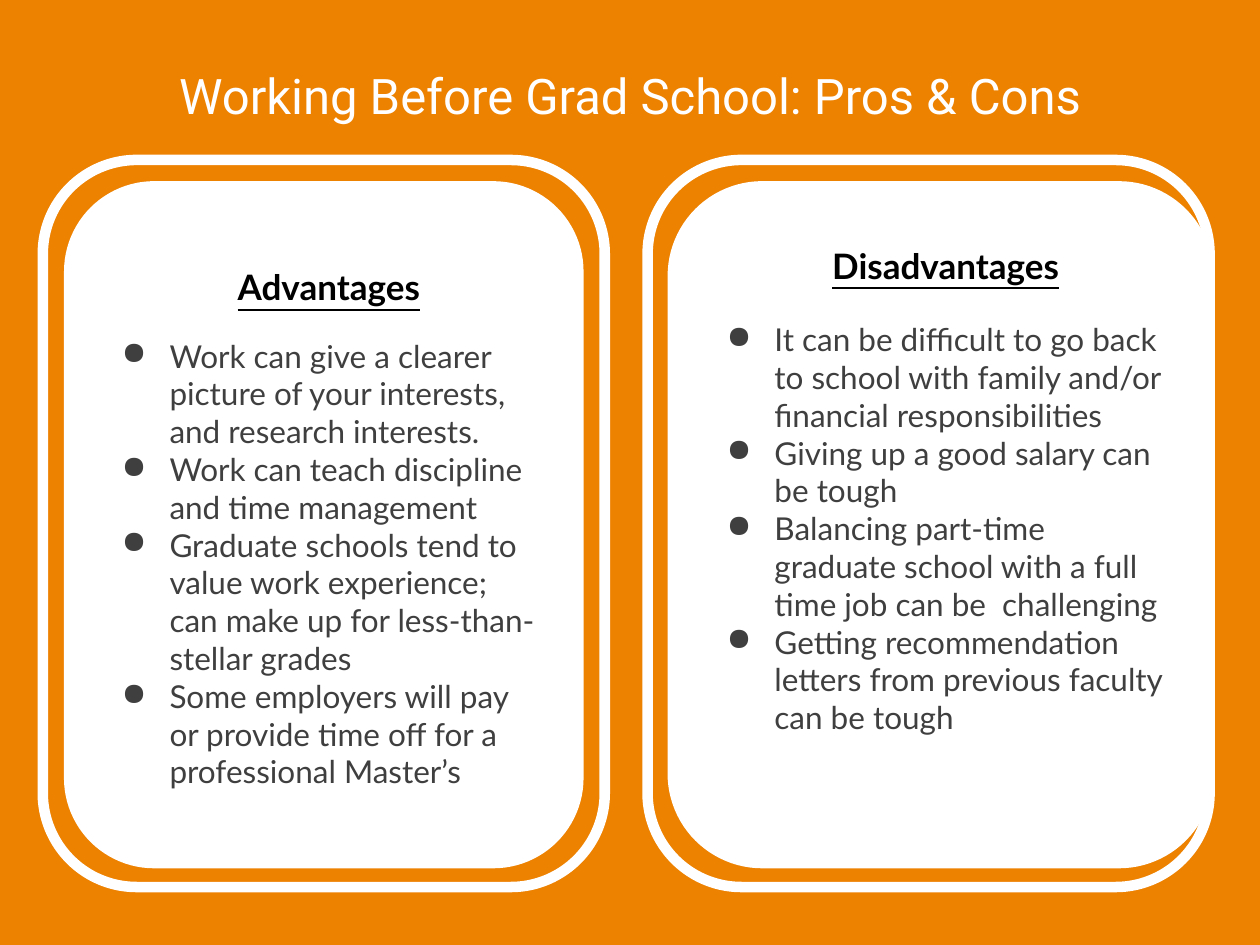
from lxml import etree
from pptx import Presentation
from pptx.dml.color import RGBColor
from pptx.enum.shapes import MSO_SHAPE
from pptx.enum.text import MSO_ANCHOR, MSO_AUTO_SIZE, PP_ALIGN
from pptx.oxml.ns import qn
from pptx.util import Inches, Pt

COLORS = {"orange": "ED8100", "white": "FFFFFF", "heading": "000000", "body": "3F3F3F"}
CARD_TOP, CARD_HEIGHT = 1.48, 5.37
FRAME_TOP, FRAME_WIDTH, FRAME_HEIGHT = 1.27, 4.46, 5.77

columns = [
    {
        "heading": "Advantages",
        "frame_left": 0.34, "card_left": 0.55, "card_width": 4.04,
        "heading_gap": 16.5, "bottom_inset": 0.05,
        "points": [
            "Work can give a clearer picture of your interests, and research interests.",
            "Work can teach discipline and time management",
            "Graduate schools tend to value work experience; \vcan make up for less-than-stellar grades",
            "Some employers will pay or provide time off for a professional Master’s",
        ],
    },
    {
        "heading": "Disadvantages",
        "frame_left": 5.14, "card_left": 5.34, "card_width": 4.25,
        "heading_gap": 19.5, "bottom_inset": 0.65,
        "points": [
            "It can be difficult to go back to school with family and/or financial responsibilities",
            "Giving up a good salary can be tough",
            "Balancing part-time graduate school with a full time job can be  challenging",
            "Getting recommendation letters from previous faculty can be tough",
        ],
    },
]


def add_rounded(page, left, top, width, height):
    shape = page.shapes.add_shape(
        MSO_SHAPE.ROUNDED_RECTANGLE, Inches(left), Inches(top), Inches(width), Inches(height))
    shape.adjustments[0] = 0.167
    shape.shadow.inherit = False
    shape.line.color.rgb = RGBColor.from_string(COLORS["white"])
    shape.line.width = Pt(6)
    return shape


def style_text(para, font_name, size, color):
    for span in para.runs:
        span.font.name = font_name
        span.font.size = Pt(size)
        span.font.color.rgb = RGBColor.from_string(COLORS[color])


deck = Presentation()
deck.slide_width, deck.slide_height = Inches(10), Inches(7.5)
page = deck.slides.add_slide(deck.slide_layouts[5])
page.background.fill.solid()
page.background.fill.fore_color.rgb = RGBColor.from_string(COLORS["orange"])

title = page.shapes.title
title.left, title.top, title.width, title.height = Inches(0), Inches(0.24), Inches(10), Inches(1.03)
title.text_frame.text = "Working Before Grad School: Pros & Cons"
title.text_frame.auto_size = MSO_AUTO_SIZE.NONE
title.text_frame.vertical_anchor = MSO_ANCHOR.MIDDLE
title.text_frame.margin_top = title.text_frame.margin_bottom = Inches(0.1)
title.text_frame.paragraphs[0].alignment = PP_ALIGN.CENTER
style_text(title.text_frame.paragraphs[0], "Roboto", 28, "white")

for column in columns:
    frame = add_rounded(page, column["frame_left"], FRAME_TOP, FRAME_WIDTH, FRAME_HEIGHT)
    frame.fill.background()

    card = add_rounded(page, column["card_left"], CARD_TOP, column["card_width"], CARD_HEIGHT)
    card.fill.solid()
    card.fill.fore_color.rgb = RGBColor.from_string(COLORS["white"])
    text = card.text_frame
    text.word_wrap = True
    text.vertical_anchor = MSO_ANCHOR.MIDDLE
    text.margin_bottom = Inches(column["bottom_inset"])

    text.text = column["heading"]
    heading = text.paragraphs[0]
    heading.alignment = PP_ALIGN.CENTER
    heading.line_spacing = 1.15
    heading.space_after = Pt(column["heading_gap"])
    heading._p.get_or_add_pPr().set("marL", str(Inches(0.08)))
    style_text(heading, "Lato", 20, "heading")
    heading.runs[0].font.bold = True
    heading.runs[0].font.underline = True

    for point in column["points"]:
        para = text.add_paragraph()
        para.text = point
        para.alignment = PP_ALIGN.LEFT
        properties = para._p.get_or_add_pPr()
        properties.set("marL", str(Inches(0.5)))
        properties.set("indent", str(Inches(-0.38)))
        bullet_color = etree.SubElement(properties, qn("a:buClr"))
        etree.SubElement(bullet_color, qn("a:srgbClr"), val=COLORS["body"])
        etree.SubElement(properties, qn("a:buChar"), char="●")
        style_text(para, "Lato", 18, "body")

deck.save("out.pptx")
